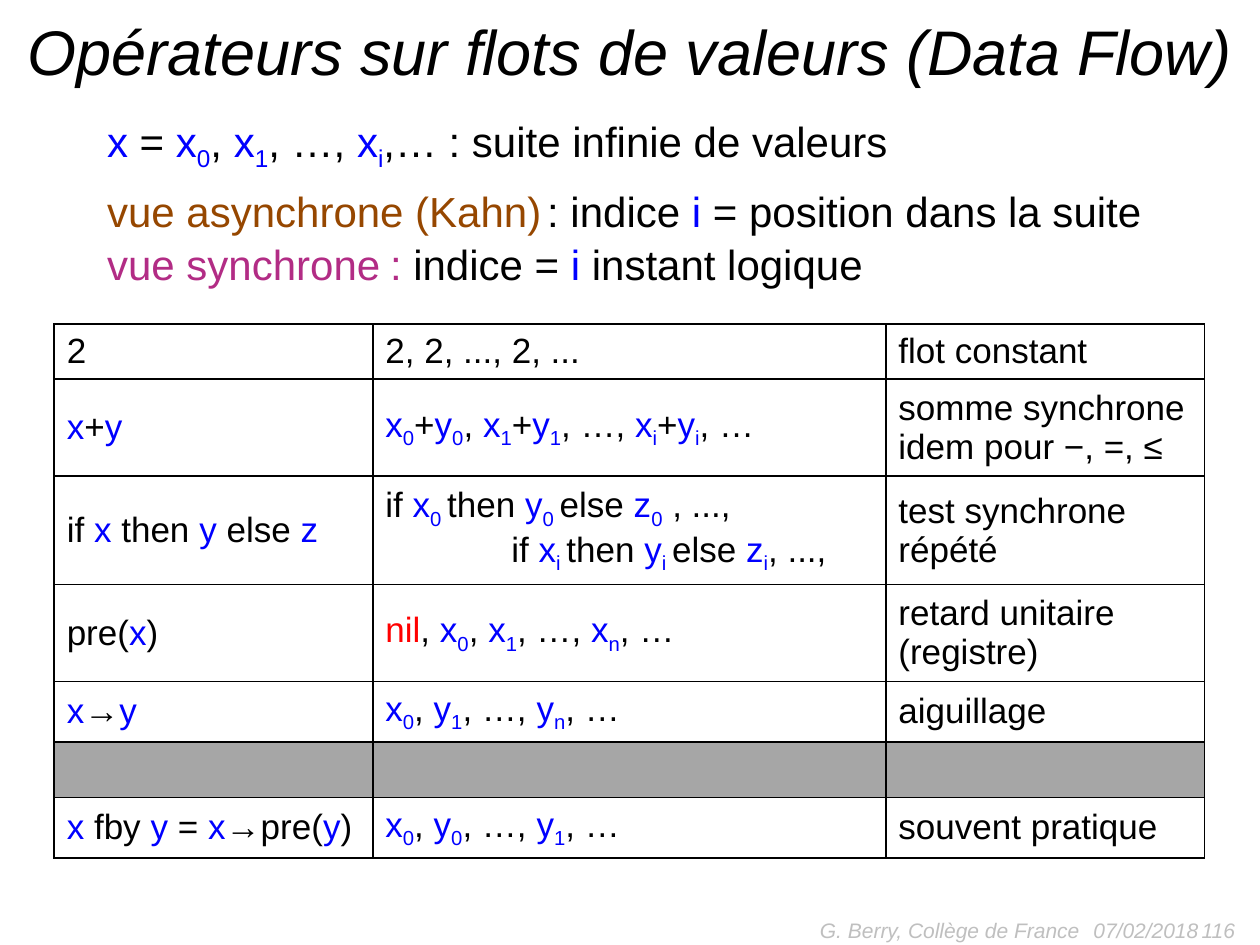
from lxml.etree import SubElement
from pptx import Presentation
from pptx.dml.color import RGBColor
from pptx.enum.text import MSO_ANCHOR, MSO_AUTO_SIZE, PP_ALIGN
from pptx.oxml.ns import qn
from pptx.util import Inches, Pt

BLACK = RGBColor(0x00, 0x00, 0x00)
BLUE = RGBColor(0x00, 0x00, 0xFF)
RED = RGBColor(0xFF, 0x00, 0x00)
BROWN = RGBColor(0x96, 0x47, 0x00)
MAGENTA = RGBColor(0xB2, 0x2C, 0x85)
LIGHT_GREY = RGBColor(0xBF, 0xBF, 0xBF)
MID_GREY = RGBColor(0xA6, 0xA6, 0xA6)

FONT = "Arial"
WIDTH, HEIGHT = 10, 7.5
STYLES = {
    "!": (RED, 1),
    "@": (BROWN, 1),
    "~": (BROWN, 0.5),
    "#": (MAGENTA, 1),
    "%": (MAGENTA, 0.83),
}

INTRO = [
    "*x* = *x_0*, *x_1*, …, *x_i*,… : suite infinie de valeurs",
    "*@vue asynchrone (Kahn)**~ *: indice *i* = position dans la suite",
    "*#vue synchrone**% **#: *indice = *i *instant logique",
]
OPERATORS = [
    (0.44, ["2"], ["2, 2, ..., 2, ..."], ["flot constant"]),
    (0.77, ["*x*+*y*"],
     ["*x_0*+*y_0*, *x_1*+*y_1*, …, *x_i*+*y_i*, …"],
     ["somme synchrone", "idem pour −, =, ≤"]),
    (0.86, ["if *x *then* y *else* z*"],
     ["if *x_0 *then* y_0 *else* z_0* , ...,",
      "\tif *x_i *then* y_i *else *z_i*, ...,"],
     ["test synchrone", "répété"]),
    (0.77, ["pre(*x*)"], ["*!nil*, *x_0*, *x_1*, …, *x_n*, …"],
     ["retard unitaire (registre)"]),
    (0.48, ["*x*→*y*"], ["*x_0*, *y_1*, …, *y_n*, …"], ["aiguillage"]),
    (0.44, [], [], []),
    (0.48, ["*x *fby *y *= *x*→pre(*y*)"],
     ["*x_0*, *y_0*, …, *y_1*, …"], ["souvent pratique"]),
]
COLUMN_SHARES = (0.277, 0.446, 0.277)


def set_values(target, values):
    for name, value in values.items():
        setattr(target, name, value)


def place(shape, box):
    set_values(shape, dict(zip(("left", "top", "width", "height"), map(Inches, box))))


def add_run(paragraph, text, size, color, italic=False, subscript=False):
    run = paragraph.add_run()
    run.text = text
    set_values(run.font, {"name": FONT, "size": Pt(size), "italic": italic})
    run.font.color.rgb = color
    if subscript:
        run.font._element.set("baseline", "-25000")


def write_formula(paragraph, markup, size):
    for index, part in enumerate(markup.split("*")):
        color, scale = BLACK, 1
        if index % 2:
            color, scale = STYLES.get(part[:1], (BLUE, 1))
            part = part[1:] if part[:1] in STYLES else part
        for level, text in enumerate(part.split("_")):
            if text:
                add_run(paragraph, text, round(size * scale), color, subscript=level > 0)


def write_lines(frame, lines, size, values):
    for index, line in enumerate(lines):
        paragraph = frame.paragraphs[0] if index == 0 else frame.add_paragraph()
        properties = paragraph._p.get_or_add_pPr()
        properties.set("marL", str(Inches(1) if line.startswith("\t") else 0))
        properties.set("indent", "0")
        set_values(paragraph, values)
        SubElement(properties, qn("a:buNone"))
        write_formula(paragraph, line.lstrip("\t"), size)


def fill_title(title, box):
    place(title, box)
    set_values(title.text_frame, {"vertical_anchor": MSO_ANCHOR.TOP, "word_wrap": True,
                                  "auto_size": MSO_AUTO_SIZE.NONE})
    paragraph = title.text_frame.paragraphs[0]
    paragraph.alignment = PP_ALIGN.CENTER
    add_run(paragraph, "Opérateurs sur flots de valeurs (Data Flow)", 36, BLACK, italic=True)


def fill_intro(body, box):
    place(body, box)
    frame = body.text_frame
    set_values(frame, {"vertical_anchor": MSO_ANCHOR.TOP, "word_wrap": True,
                       "auto_size": MSO_AUTO_SIZE.NONE})
    write_lines(frame, INTRO, 24, {"line_spacing": 1.05, "space_before": Pt(0),
                                   "space_after": Pt(0)})
    frame.paragraphs[0].space_after = Pt(6)


def add_borders(cell):
    properties = cell._tc.get_or_add_tcPr()
    for position, side in enumerate(("lnL", "lnR", "lnT", "lnB")):
        line = SubElement(properties, qn(f"a:{side}"), w=str(Pt(1)))
        fill = SubElement(line, qn("a:solidFill"))
        SubElement(fill, qn("a:srgbClr"), val=str(BLACK))
        properties.insert(position, line)


def add_operator_table(slide, box):
    frame = slide.shapes.add_table(len(OPERATORS), len(COLUMN_SHARES), *map(Inches, box))
    table = frame.table
    set_values(table, {"first_row": False, "horz_banding": False})
    for column, share in zip(table.columns, COLUMN_SHARES):
        column.width = Inches(box[2] * share)
    for row, (height, *contents) in zip(table.rows, OPERATORS):
        row.height = Inches(height)
        for cell, lines in zip(row.cells, contents):
            cell.vertical_anchor = MSO_ANCHOR.MIDDLE
            if lines:
                cell.fill.background()
            else:
                cell.fill.solid()
                cell.fill.fore_color.rgb = MID_GREY
            add_borders(cell)
            write_lines(cell.text_frame, lines, 20, {"alignment": PP_ALIGN.LEFT})


def add_footer(slide, box):
    left, top, width, height = box
    parts = [
        ("G. Berry, Collège de France", 0, 0.72, PP_ALIGN.RIGHT),
        ("07/02/2018", 0.7, 0.25, PP_ALIGN.LEFT),
        ("116", 0.86, 0.14, PP_ALIGN.RIGHT),
    ]
    for text, offset, share, alignment in parts:
        shape = slide.shapes.add_textbox(
            *map(Inches, (left + width * offset, top, width * share, height)))
        set_values(shape.text_frame, {"word_wrap": True, "vertical_anchor": MSO_ANCHOR.MIDDLE})
        paragraph = shape.text_frame.paragraphs[0]
        paragraph.alignment = alignment
        add_run(paragraph, text, 12, LIGHT_GREY, italic=True)


def main():
    presentation = Presentation()
    set_values(presentation, {"slide_width": Inches(WIDTH), "slide_height": Inches(HEIGHT)})
    slide = presentation.slides.add_slide(presentation.slide_layouts[1])
    title, body = slide.placeholders
    fill_title(title, (0, 0.05, WIDTH, 1.31))
    fill_intro(body, (0.75, 0.84, WIDTH * 0.85, 1.46))
    add_operator_table(slide, (0.43, 2.57, 9.13, sum(row[0] for row in OPERATORS)))
    add_footer(slide, (5.5, 7.18, WIDTH * 0.44, 0.4))
    presentation.save("out.pptx")


if __name__ == "__main__":
    main()
